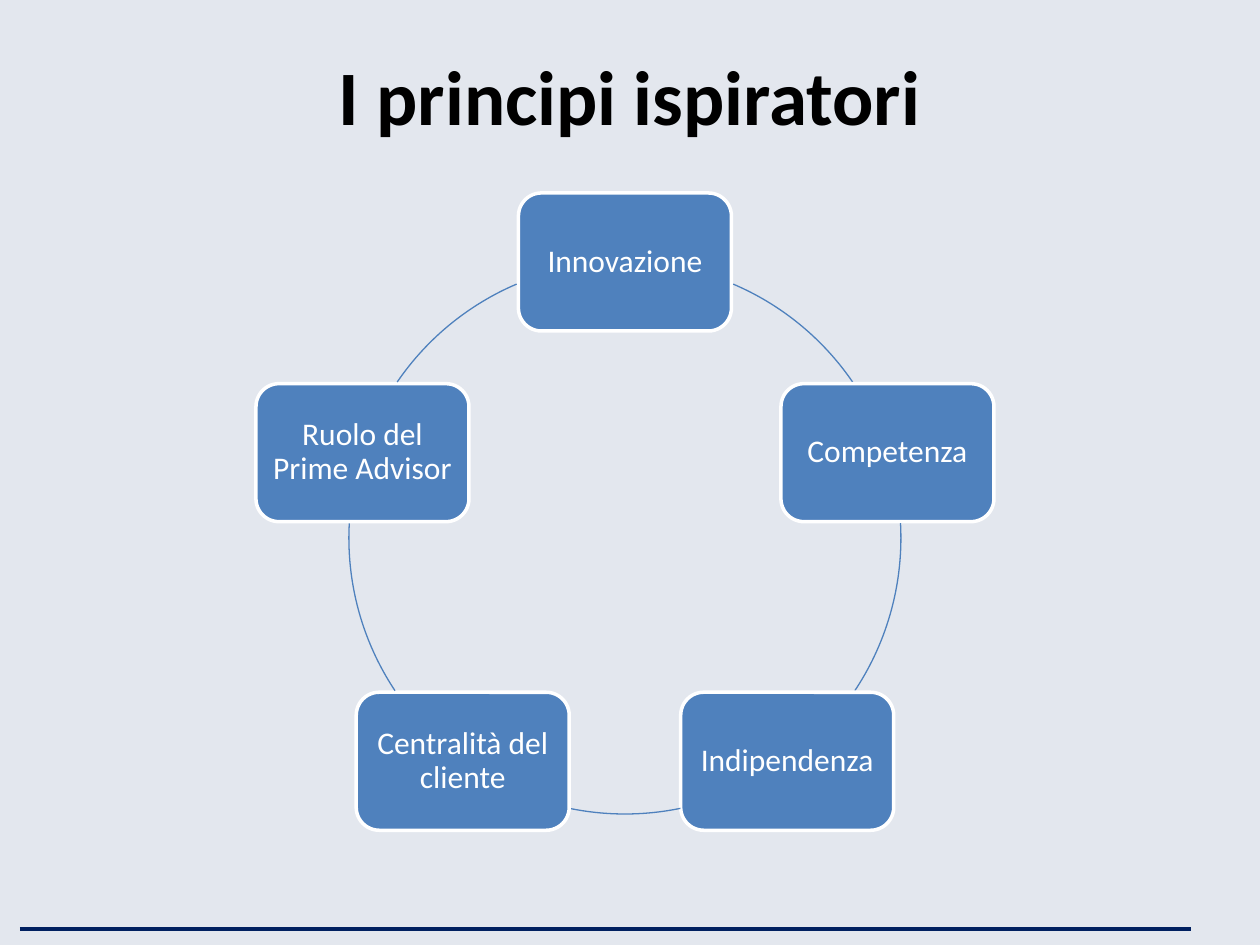
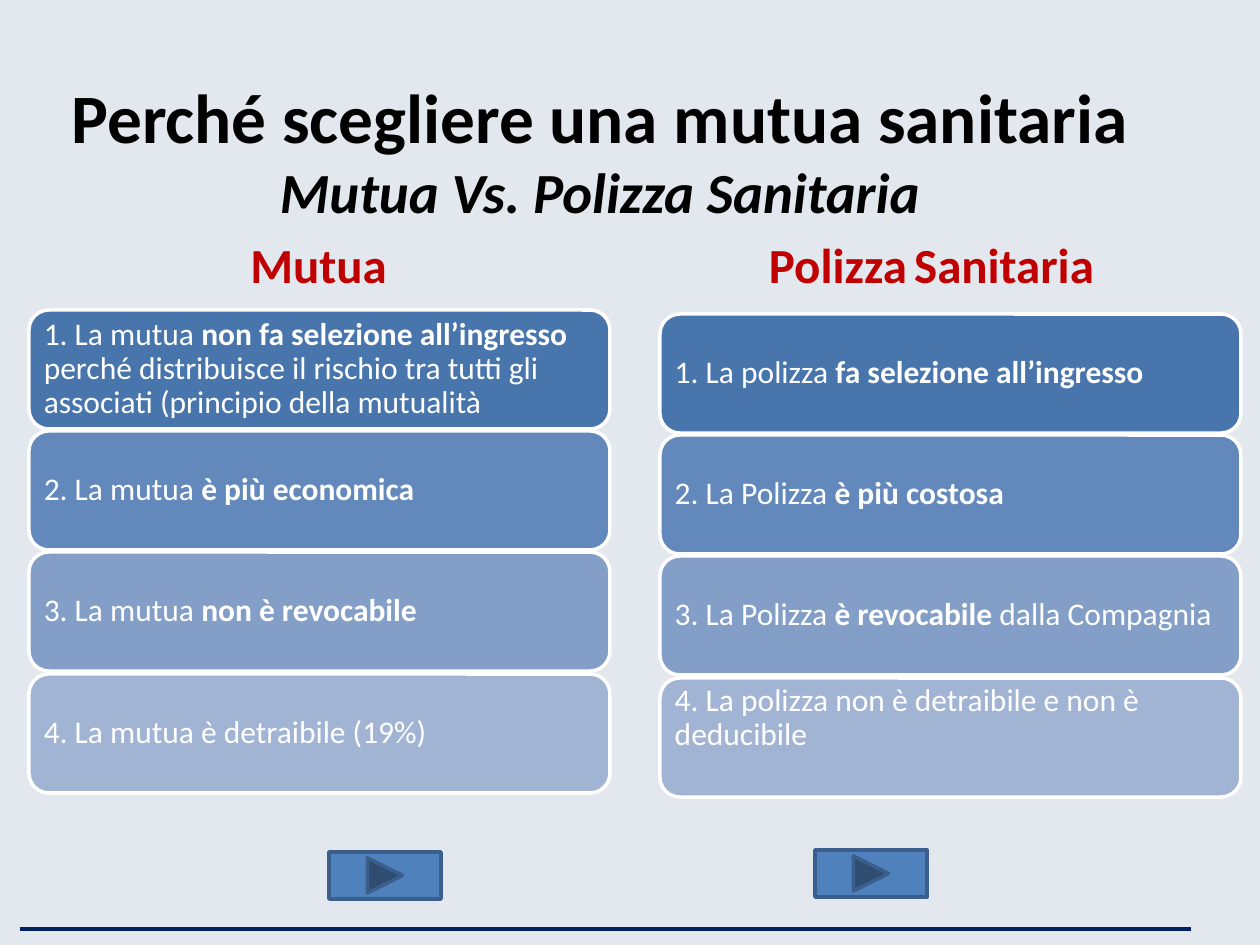
from math import cos, radians, sin

from pptx import Presentation
from pptx.dml.color import RGBColor
from pptx.enum.shapes import MSO_CONNECTOR as Connector, MSO_SHAPE as Shape
from pptx.enum.text import MSO_ANCHOR as Anchor, PP_ALIGN as Align
from pptx.oxml.ns import qn
from pptx.util import Pt
from lxml.etree import SubElement

# Content
PRINCIPLES_TITLE = [[("I principi ispiratori", "title")]]
PRINCIPLES = ["Innovazione", "Competenza", "Indipendenza",
              "Centralità del cliente", "Ruolo del Prime Advisor"]
COMPARISON_TITLE = [[("Perché scegliere una mutua sanitaria", "long_title")],
                    [("Mutua Vs. Polizza Sanitaria", "subtitle")]]
COLUMNS = [
    {
        "heading": [("Mutua", "heading")],
        "heading_box": (120, 228, 397, 72),
        "rows_at": (29, 310),
        "button_at": (329, 852),
        "rows": [
            [("1. La mutua ", "body"), ("non fa selezione all’ingresso ", "strong"),
             ("perché distribuisce il rischio tra tutti gli associati "
              "(principio della mutualità", "body")],
            [("2. La mutua ", "body"), ("è più economica", "strong")],
            [("3. La mutua ", "body"), ("non è revocabile", "strong")],
            [("4. La mutua è detraibile (19%)", "body")],
        ],
    },
    {
        "heading": [("Polizza", "heading"), (" ", "heading_gap"),
                    ("Sanitaria", "heading")],
        "heading_box": (723, 228, 417, 72),
        "rows_at": (660, 314),
        "button_at": (815, 850),
        "rows": [
            [("1. La polizza ", "body"), ("fa selezione all’ingresso", "strong")],
            [("2. La Polizza ", "body"), ("è più costosa", "strong")],
            [("3. La Polizza ", "body"), ("è revocabile", "strong"),
             (" dalla Compagnia", "body")],
            [("4. La polizza non è detraibile e non è deducibile", "body")],
        ],
    },
]

# Theme
THEME = {
    "font": "Calibri",
    "background": "E3E7EE",
    "rule": "002060",
    "accent": "4F81BD",
    "button_line": "3A5F8C",
    "white": "FFFFFF",
    "row_fills": ["4875AC", "6389BC", "839EC7", "A2B4D4"],
    "text": {
        "title": {"size": 44, "color": "000000", "bold": True},
        "long_title": {"size": 39.6, "color": "000000", "bold": True},
        "subtitle": {"size": 32.4, "color": "000000", "bold": True, "italic": True},
        "heading": {"size": 28, "color": "C00000", "bold": True},
        "heading_gap": {"size": 18, "color": "C00000", "bold": True},
        "body": {"size": 18, "color": "FFFFFF", "bold": False},
        "strong": {"size": 18, "color": "FFFFFF", "bold": True},
    },
}

# Geometry in px
SLIDE_SIZE = (1260, 945)
TITLE_SIZE = (1134, 157)
RULE = (20, 929, 1191, 929)
RING_CENTER, RING_RADIUS = (625, 538), 276
NODE_SIZE = (213, 138)
ARC_ANGLES = [(293.1, 325.6), (356.9, 33.6), (78.4, 101.4),
              (146.4, 183.1), (214.4, 246.9)]
ROW_SIZE, ROWS_SPAN = (581, 119), 364
BUTTON_SIZE = (112, 47)
BOX_MARGINS, CARD_MARGINS = (13, 6, 13, 6), (9, 9, 9, 9)


def px(value):
    return round(value * 914400 / 126)


def rgb(name):
    return RGBColor.from_string(THEME.get(name, name))


def write(shape, lines, align, anchor=Anchor.MIDDLE, margins=BOX_MARGINS, spacing=1.0):
    """Fill a shape with one paragraph; its lines are lists of (text, style)."""
    frame = shape.text_frame
    settings = {"word_wrap": True, "vertical_anchor": anchor}
    settings.update(zip(("margin_left", "margin_top", "margin_right", "margin_bottom"),
                        map(px, margins)))
    for name, value in settings.items():
        setattr(frame, name, value)
    paragraph = frame.paragraphs[0]
    paragraph.alignment, paragraph.line_spacing = align, spacing
    for index, line in enumerate(lines):
        if index:
            paragraph.add_line_break()
        for text, style in line:
            run = paragraph.add_run()
            run.text = text
            run.font.name = THEME["font"]
            for name, value in THEME["text"][style].items():
                if name == "color":
                    run.font.color.rgb = rgb(value)
                else:
                    setattr(run.font, name, Pt(value) if name == "size" else value)


def add_text(slide, box, lines, **options):
    write(slide.shapes.add_textbox(*map(px, box)), lines, Align.CENTER, **options)


def add_shape(slide, kind, box, fill, line, width=2):
    shape = slide.shapes.add_shape(kind, *map(px, box))
    shape.shadow.inherit = False
    if fill:
        shape.fill.solid()
        shape.fill.fore_color.rgb = rgb(fill)
    else:
        shape.fill.background()
    shape.line.color.rgb = rgb(line)
    shape.line.width = Pt(width)
    return shape


def add_slide(presentation, title, title_at):
    """Blank slide with the shared background, bottom rule and title."""
    slide = presentation.slides.add_slide(presentation.slide_layouts[6])
    slide.background.fill.solid()
    slide.background.fill.fore_color.rgb = rgb("background")
    rule = slide.shapes.add_connector(Connector.STRAIGHT, *map(px, RULE))
    rule.line.color.rgb = rgb("rule")
    rule.line.width = Pt(2)
    SubElement(rule._element.spPr, qn("a:effectLst"))
    add_text(slide, (*title_at, *TITLE_SIZE), title)
    return slide


def add_principles(presentation):
    slide = add_slide(presentation, PRINCIPLES_TITLE, (63, 16))
    center_x, center_y = RING_CENTER
    width, height = NODE_SIZE
    ring_box = (center_x - RING_RADIUS, center_y - RING_RADIUS,
                2 * RING_RADIUS, 2 * RING_RADIUS)
    for index, (name, angles) in enumerate(zip(PRINCIPLES, ARC_ANGLES)):
        # Node on the ring, starting at the top and going clockwise
        turn = radians(index * 360 / len(PRINCIPLES) - 90)
        left = center_x + RING_RADIUS * cos(turn) - width / 2
        top = center_y + RING_RADIUS * sin(turn) - height / 2
        node = add_shape(slide, Shape.ROUNDED_RECTANGLE, (left, top, width, height),
                         "accent", "white")
        write(node, [[(name, "body")]], Align.CENTER, margins=CARD_MARGINS, spacing=0.9)
        # Arc to the next node; angles are stored in 60000ths of a degree
        arc = add_shape(slide, Shape.ARC, ring_box, None, "accent", 0.75)
        for position, angle in enumerate(angles):
            arc.adjustments[position] = angle * 0.6


def add_comparison(presentation):
    slide = add_slide(presentation, COMPARISON_TITLE, (33, 71))
    for column in COLUMNS:
        add_text(slide, column["heading_box"], [column["heading"]], anchor=Anchor.TOP)
        # Stacked rows, fading downwards
        left, top = column["rows_at"]
        for index, (runs, fill) in enumerate(zip(column["rows"], THEME["row_fills"])):
            row_top = top + index * ROWS_SPAN // 3
            row = add_shape(slide, Shape.ROUNDED_RECTANGLE, (left, row_top, *ROW_SIZE),
                            fill, "white")
            write(row, [runs], Align.LEFT, margins=CARD_MARGINS, spacing=0.9)
    # The last policy row sits at the top of its card
    row.text_frame.vertical_anchor = Anchor.TOP
    row.text_frame.margin_top = 0
    for column in COLUMNS:
        add_shape(slide, Shape.ACTION_BUTTON_FORWARD_OR_NEXT,
                  (*column["button_at"], *BUTTON_SIZE), "accent", "button_line")


def main():
    presentation = Presentation()
    presentation.slide_width, presentation.slide_height = map(px, SLIDE_SIZE)
    add_principles(presentation)
    add_comparison(presentation)
    presentation.save("out.pptx")


if __name__ == "__main__":
    main()
